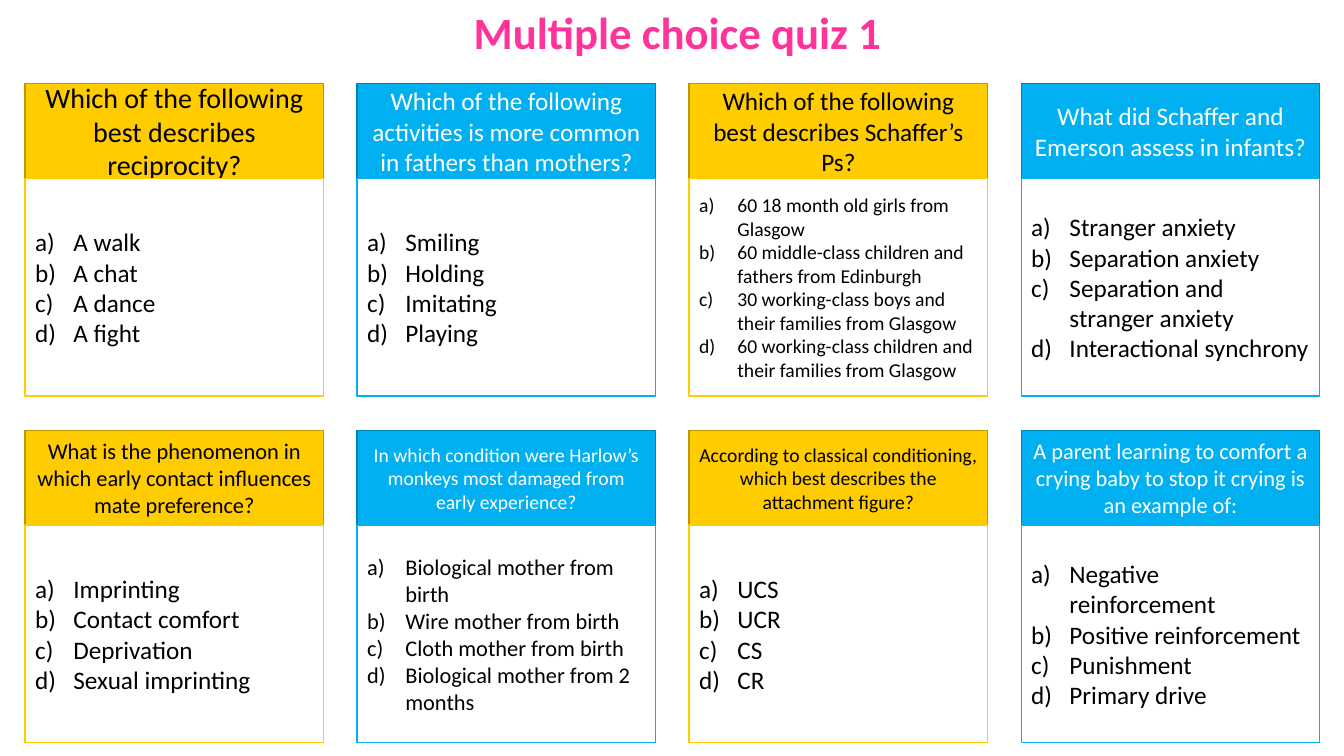
from lxml import etree
from pptx import Presentation
from pptx.dml.color import RGBColor
from pptx.enum.shapes import MSO_SHAPE
from pptx.enum.text import MSO_ANCHOR, PP_ALIGN
from pptx.oxml.ns import qn
from pptx.util import Inches, Pt

RECTANGLE = MSO_SHAPE.RECTANGLE
MIDDLE = MSO_ANCHOR.MIDDLE
CENTER, LEFT = PP_ALIGN.CENTER, PP_ALIGN.LEFT

TITLE = "Multiple choice quiz 1"
QUIZ = [
    ("Which of the following best describes reciprocity?", 20,
     ["A walk", "A chat", "A dance", "A fight"], 18),
    ("Which of the following activities is more common in fathers than mothers?", 18,
     ["Smiling", "Holding", "Imitating", "Playing"], 18),
    ("Which of the following best describes Schaffer’s Ps?", 18,
     ["60 18 month old girls from Glasgow",
      "60 middle-class children and fathers from Edinburgh",
      "30 working-class boys and their families from Glasgow",
      "60 working-class children and their families from Glasgow"], 14),
    ("What did Schaffer and Emerson assess in infants?", 18,
     ["Stranger anxiety", "Separation anxiety", "Separation and stranger anxiety",
      "Interactional synchrony"], 18),
    ("What is the phenomenon in which early contact influences mate preference?", 16,
     ["Imprinting", "Contact comfort", "Deprivation", "Sexual imprinting"], 18),
    ("In which condition were Harlow’s monkeys most damaged from early experience?", 14,
     ["Biological mother from birth", "Wire mother from birth",
      "Cloth mother from birth", "Biological mother from 2 months"], 16),
    ("According to classical conditioning, which best describes the attachment figure?", 14,
     ["UCS", "UCR", "CS", "CR"], 18),
    ("A parent learning to comfort a crying baby to stop it crying is an example of:", 16,
     ["Negative reinforcement", "Positive reinforcement", "Punishment", "Primary drive"], 18),
]
THEMES = [("FFCC00", "BD9700", "000000"), ("00B0F0", "0082B2", "FFFFFF")]

FONT = "Calibri"
COLUMNS = 4
GRID_LEFT, GRID_TOP = 0.25, 0.83
COLUMN_STEP, ROW_STEP = 3.293, 3.44
CARD_WIDTH, QUESTION_HEIGHT, ANSWERS_HEIGHT = 2.96, 0.94, 2.16
INDENT = 0.38


def rgb(value):
    """Return the colour for a hex string."""
    return RGBColor.from_string(value)


def write(frame, lines, size, color, align=LEFT, bold=False, lettered=False):
    """Write paragraphs into a text frame, optionally lettered a) to d)."""
    frame.vertical_anchor = MIDDLE
    for index, line in enumerate(lines):
        paragraph = frame.add_paragraph() if index else frame.paragraphs[0]
        paragraph.alignment = align
        run = paragraph.add_run()
        run.text = line
        run.font.name, run.font.size, run.font.bold = FONT, Pt(size), bold
        run.font.color.rgb = rgb(color)
        if lettered:
            properties = paragraph._p.get_or_add_pPr()
            properties.set("marL", str(Inches(INDENT)))
            properties.set("indent", str(-Inches(INDENT)))
            etree.SubElement(properties, qn("a:buFont"), typeface="+mj-lt")
            etree.SubElement(properties, qn("a:buAutoNum"), type="alphaLcParenR")


def add_box(slide, left, top, height, fill, line):
    """Add one card-wide rectangle and return its text frame."""
    box = slide.shapes.add_shape(
        RECTANGLE, Inches(left), Inches(top), Inches(CARD_WIDTH), Inches(height))
    box.shadow.inherit = False
    box.fill.solid()
    box.fill.fore_color.rgb = rgb(fill)
    box.line.color.rgb = rgb(line)
    box.line.width = Pt(1)
    box.text_frame.word_wrap = True
    return box.text_frame


def main():
    """Build the quiz slide."""
    deck = Presentation()
    deck.slide_width, deck.slide_height = Inches(13.33), Inches(7.5)
    slide = deck.slides.add_slide(deck.slide_layouts[6])

    for index, (question, question_size, answers, answer_size) in enumerate(QUIZ):
        row, column = divmod(index, COLUMNS)
        left = GRID_LEFT + column * COLUMN_STEP
        top = GRID_TOP + row * ROW_STEP
        accent, edge, ink = THEMES[column % 2]
        heading = add_box(slide, left, top, QUESTION_HEIGHT, accent, edge)
        write(heading, [question], question_size, ink, align=CENTER)
        choices = add_box(slide, left, top + QUESTION_HEIGHT, ANSWERS_HEIGHT, "FFFFFF", accent)
        write(choices, answers, answer_size, "000000", lettered=True)

    title = slide.shapes.add_textbox(Inches(4.58), Inches(-0.01), Inches(4.28), Inches(0.64))
    title.text_frame.word_wrap = False
    write(title.text_frame, [TITLE], 32, "FF3399", align=CENTER, bold=True)
    deck.save("out.pptx")


if __name__ == "__main__":
    main()
